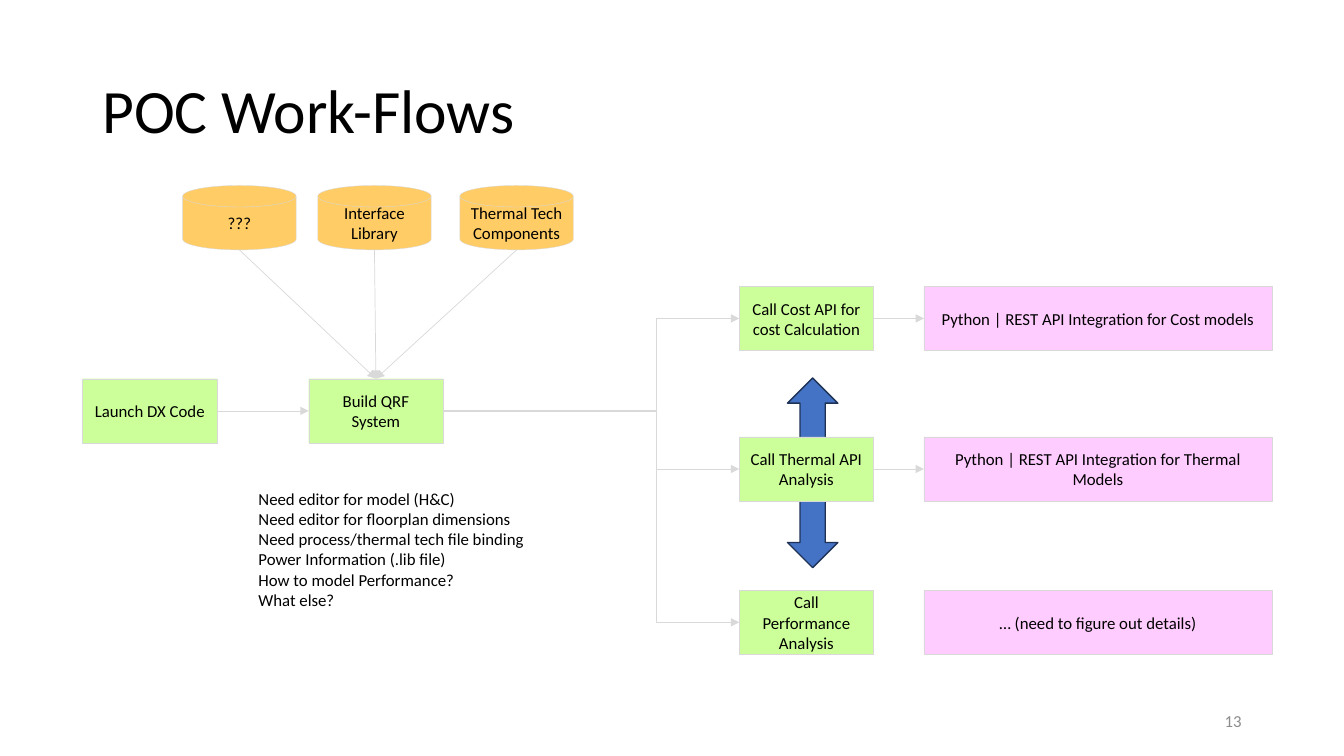
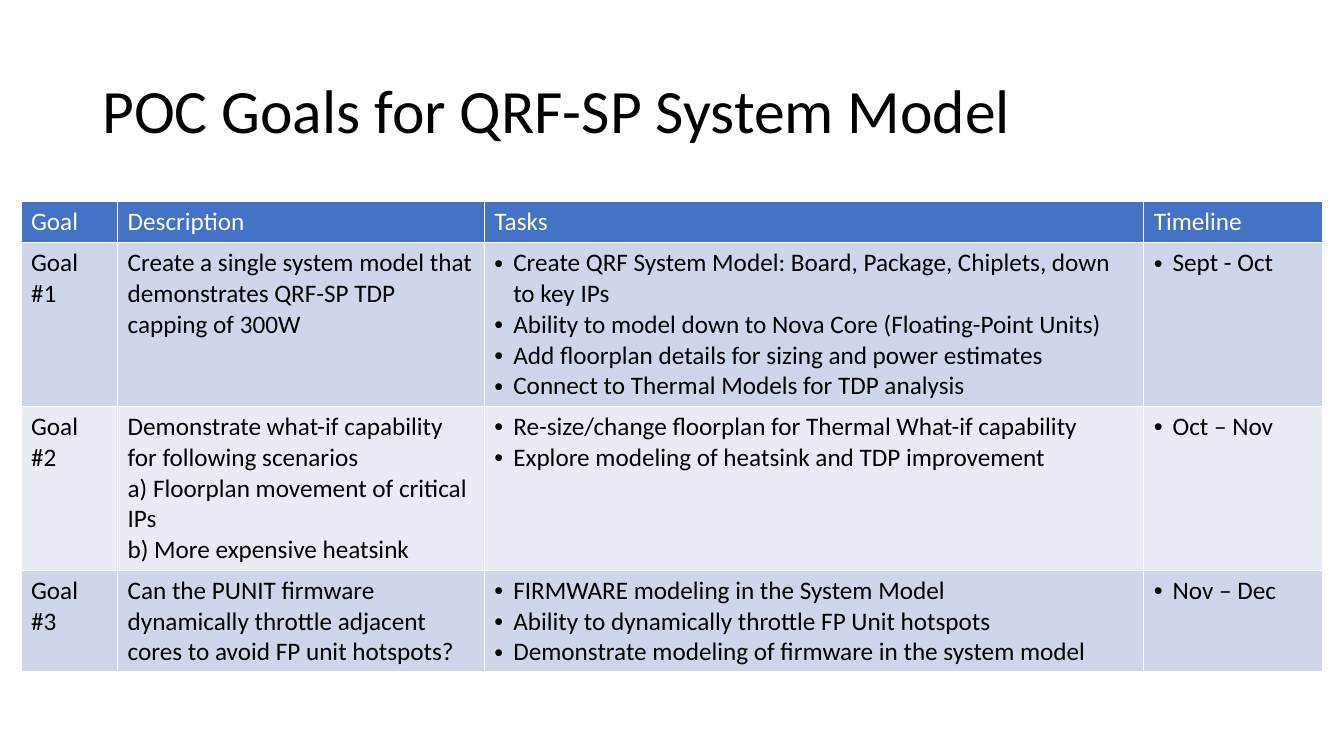
from collections import namedtuple
from dataclasses import dataclass

from lxml.etree import SubElement
from pptx import Presentation
from pptx.dml.color import RGBColor
from pptx.enum.shapes import MSO_CONNECTOR as Link, MSO_SHAPE as Shape
from pptx.enum.text import MSO_ANCHOR as Anchor, PP_ALIGN as Align
from pptx.oxml.ns import qn
from pptx.util import Pt

Box = namedtuple("Box", "left top width height")


@dataclass(frozen=True)
class Theme:
    font: str = "Calibri"
    ink: str = "000000"
    paper: str = "FFFFFF"
    muted: str = "8C8C8C"
    rule: str = "D9D9D9"
    accent: str = "4472C4"
    accent_edge: str = "1E3256"
    step: str = "CCFF99"
    outcome: str = "FFCCFF"
    library: str = "FFCC66"
    bands: tuple = ("CFD5EA", "E9EBF5")
    title_size: int = 44
    table_size: int = 18
    small_size: int = 12


THEME = Theme()
PAGE = Box(0, 0, 960, 540)
TITLE = Box(66, 29, 828, 104)
NUMBER = Box(678, 500.5, 216, 29)
FLOW = Box(59, 132.5, 857, 335)
GOALS = Box(15, 144, 929.5, 336)

LIBRARIES = [(71.5, "???"), (168, "Interface Library"),
             (269.5, "Thermal Tech Components")]
LANES = [
    (72, "Call Cost API for cost Calculation",
     "Python | REST API Integration for Cost models", True),
    (179.5, "Call Thermal API Analysis",
     "Python | REST API Integration for Thermal Models", True),
    (289, "Call Performance Analysis", "… (need to figure out details)", False),
]
NOTES = [
    "Need editor for model (H&C)",
    "Need editor for floorplan dimensions",
    "Need process/thermal tech file binding",
    "Power Information (.lib file)",
    "How to model Performance?",
    "What else?",
]

COLUMN_WIDTHS = [69, 262, 471, 127.5]
ROW_HEIGHTS = [29.5, 117, 117, 72.5]
BULLETED_COLUMNS = (2, 3)
GOAL_ROWS = [
    [["Goal"], ["Description"], ["Tasks"], ["Timeline"]],
    [["Goal #1"],
     ["Create a single system model that demonstrates QRF-SP TDP capping of 300W"],
     ["Create QRF System Model: Board, Package, Chiplets, down to key IPs",
      "Ability to model down to Nova Core (Floating-Point Units)",
      "Add floorplan details for sizing and power estimates",
      "Connect to Thermal Models for TDP analysis"],
     ["Sept - Oct"]],
    [["Goal #2"],
     ["Demonstrate what-if capability for following scenarios",
      "a) Floorplan movement of critical IPs",
      "b) More expensive heatsink"],
     ["Re-size/change floorplan for Thermal What-if capability",
      "Explore modeling of heatsink and TDP improvement"],
     ["Oct – Nov"]],
    [["Goal #3"],
     ["Can the PUNIT firmware dynamically throttle adjacent cores to avoid "
      "FP unit hotspots?"],
     ["FIRMWARE modeling in the System Model",
      "Ability to dynamically throttle FP Unit hotspots",
      "Demonstrate modeling of firmware in the system model"],
     ["Nov – Dec"]],
]


# Formatting helpers
def set_all(target, **values):
    for name, value in values.items():
        setattr(target, name, value)


def points(box):
    return [Pt(length) for length in box]


def within(area, left, top, width, height):
    return Box(area.left + left, area.top + top, width, height)


def paint(fill, color):
    fill.solid()
    fill.fore_color.rgb = RGBColor.from_string(color)


def outline(line, color, width):
    paint(line.fill, color)
    line.width = Pt(width)


def add_bullet(para, indent=13.5):
    props = para._p.get_or_add_pPr()
    props.set("marL", str(Pt(indent)))
    props.set("indent", str(-Pt(indent)))
    SubElement(props, qn("a:buFont"), typeface="Arial")
    SubElement(props, qn("a:buChar"), char="•")


def write(frame, lines, size, color=THEME.ink, align=Align.LEFT,
          spacing=1.0, bulleted=False):
    for index, line in enumerate(lines):
        para = frame.add_paragraph() if index else frame.paragraphs[0]
        set_all(para, alignment=align, line_spacing=spacing)
        if bulleted:
            add_bullet(para)
        span = para.add_run()
        span.text = line
        set_all(span.font, name=THEME.font, size=Pt(size), bold=False)
        span.font.color.rgb = RGBColor.from_string(color)


def add_text(page, box, lines, size, anchor=Anchor.MIDDLE, **style):
    frame = page.shapes.add_textbox(*points(box)).text_frame
    set_all(frame, word_wrap=True, vertical_anchor=anchor)
    write(frame, lines, size, **style)


def add_node(page, kind, box, fill, text="", edge=THEME.rule, edge_width=0.25):
    node = page.shapes.add_shape(kind, *points(box))
    node.shadow.inherit = False
    paint(node.fill, fill)
    outline(node.line, edge, edge_width)
    if text:
        set_all(node.text_frame, word_wrap=True, vertical_anchor=Anchor.MIDDLE)
        write(node.text_frame, [text], THEME.small_size, align=Align.CENTER)
    return node


# Connectors: down from a library, or right from a box
def link(page, source, target, down=False, bend=None):
    if down:
        start = source.left + source.width // 2, source.top + source.height
        target_site = 0
    else:
        start = source.left + source.width, source.top + source.height // 2
        target_site = 1
    kind = Link.ELBOW if bend else Link.STRAIGHT
    arrow = page.shapes.add_connector(kind, *start, target.left, target.top)
    arrow.begin_connect(source, 3)
    arrow.end_connect(target, target_site)
    set_all(arrow, begin_x=start[0], begin_y=start[1])
    outline(arrow.line, THEME.rule, 0.5)
    SubElement(arrow.line._get_or_add_ln(), qn("a:tailEnd"), type="triangle")
    props = arrow._element.spPr
    SubElement(props, qn("a:effectLst"))
    if bend:
        guides = props.find(qn("a:prstGeom")).find(qn("a:avLst"))
        SubElement(guides, qn("a:gd"), name="adj1",
                   fmla=f"val {round(bend * 100000)}")


# Slide regions
def add_page(deck, title):
    page = deck.slides.add_slide(deck.slide_layouts[6])
    add_text(page, TITLE, [title], THEME.title_size, spacing=0.9)
    return page


def draw_workflow(page, area):
    def step(left, top, text):
        box = within(area, left, top, 96, 46)
        return add_node(page, Shape.RECTANGLE, box, THEME.step, text)

    # Two-way arrow behind the lanes
    add_node(page, Shape.UP_DOWN_ARROW, within(area, 503.5, 137.5, 36, 135.5),
             THEME.accent, edge=THEME.accent_edge, edge_width=1)

    # Launch and build, fed by the libraries
    launch = step(0, 138, "Launch DX Code")
    build = step(161.5, 138, "Build QRF System")
    link(page, launch, build)
    for left, name in LIBRARIES:
        disk = add_node(page, Shape.FLOWCHART_MAGNETIC_DISK,
                        within(area, left, 0, 81, 46), THEME.library, name)
        link(page, disk, build, down=True)

    # Analysis lanes
    for top, call_text, outcome_text, linked in LANES:
        call = step(469, top, call_text)
        outcome = add_node(page, Shape.RECTANGLE,
                           within(area, 601, top, 248.5, 46),
                           THEME.outcome, outcome_text)
        link(page, build, call, bend=0.72)
        if linked:
            link(page, call, outcome)

    # Open questions
    add_text(page, within(area, 118.5, 213, 212, 94.5), NOTES,
             THEME.small_size, anchor=Anchor.TOP)


def add_borders(cell, color, width):
    props = cell._tc.get_or_add_tcPr()
    for index, side in enumerate(("lnL", "lnR", "lnT", "lnB")):
        line = props.makeelement(qn(f"a:{side}"), {"w": str(Pt(width))})
        fill = SubElement(line, qn("a:solidFill"))
        SubElement(fill, qn("a:srgbClr"), val=color)
        props.insert(index, line)


def draw_goals(page, area):
    table = page.shapes.add_table(len(GOAL_ROWS), len(COLUMN_WIDTHS),
                                  *points(area)).table
    for column, width in zip(table.columns, COLUMN_WIDTHS):
        column.width = Pt(width)
    for row, height in zip(table.rows, ROW_HEIGHTS):
        row.height = Pt(height)
    for row_index, row in enumerate(GOAL_ROWS):
        header = row_index == 0
        fill = THEME.accent if header else THEME.bands[(row_index - 1) % 2]
        for column_index, lines in enumerate(row):
            cell = table.cell(row_index, column_index)
            paint(cell.fill, fill)
            add_borders(cell, THEME.paper, 1)
            write(cell.text_frame, lines, THEME.table_size,
                  color=THEME.paper if header else THEME.ink,
                  bulleted=not header and column_index in BULLETED_COLUMNS)


def main():
    deck = Presentation()
    set_all(deck, slide_width=Pt(PAGE.width), slide_height=Pt(PAGE.height))

    workflow = add_page(deck, "POC Work-Flows")
    draw_workflow(workflow, FLOW)
    add_text(workflow, NUMBER, ["13"], THEME.small_size,
             color=THEME.muted, align=Align.RIGHT)

    goals = add_page(deck, "POC Goals for QRF-SP System Model")
    draw_goals(goals, GOALS)

    deck.save("out.pptx")


if __name__ == "__main__":
    main()
